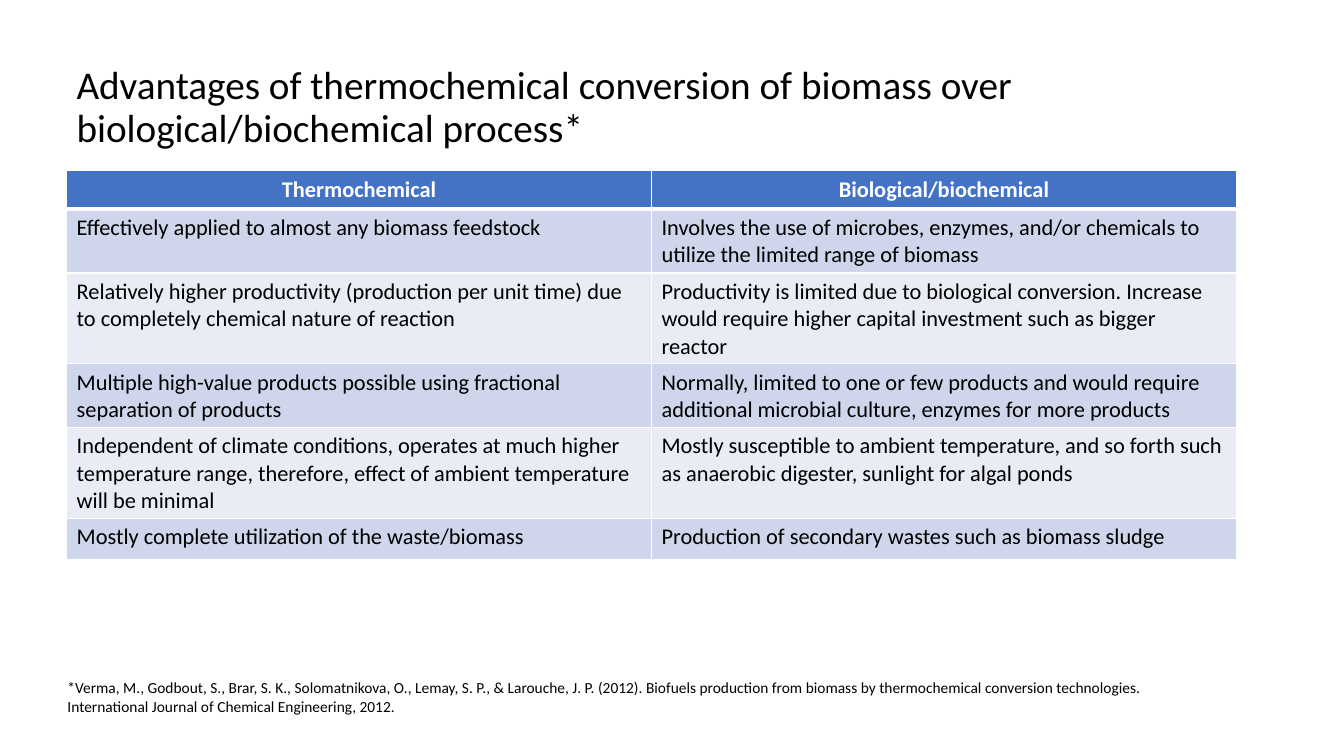
from dataclasses import dataclass

from lxml.etree import SubElement
from pptx import Presentation
from pptx.dml.color import RGBColor
from pptx.enum.text import MSO_ANCHOR, PP_ALIGN
from pptx.oxml.ns import qn
from pptx.util import Cm, Pt


@dataclass(frozen=True)
class Theme:
    font: str = "Calibri"
    text: str = "000000"
    white: str = "FFFFFF"
    header: str = "4472C4"
    bands: tuple = ("CFD5EA", "E9EBF5")
    title_size: int = 28
    table_size: int = 16
    citation_size: int = 11


theme = Theme()


def write(text_frame, text, size, color, bold=False):
    text_frame.word_wrap = True
    paragraph = text_frame.paragraphs[0]
    paragraph.text = text
    paragraph.font.name = theme.font
    paragraph.font.size = Pt(size)
    paragraph.font.bold = bold
    paragraph.font.color.rgb = RGBColor.from_string(color)
    return paragraph


def add_border(cell, side, width):
    properties = cell._tc.get_or_add_tcPr()
    line = SubElement(properties, qn(f"a:ln{side}"), w=str(Pt(width)))
    fill = SubElement(line, qn("a:solidFill"))
    SubElement(fill, qn("a:srgbClr"), val=theme.white)


presentation = Presentation()
presentation.slide_width = Cm(33.87)
presentation.slide_height = Cm(19.05)
slide = presentation.slides.add_slide(presentation.slide_layouts[6])

title = slide.shapes.add_textbox(Cm(1.68), Cm(0.89), Cm(29.48), Cm(3.68))
title.text_frame.vertical_anchor = MSO_ANCHOR.MIDDLE
title_paragraph = write(
    title.text_frame,
    "Advantages of thermochemical conversion of biomass over biological/biochemical process*",
    theme.title_size,
    theme.text,
)
title_paragraph.line_spacing = 0.9

comparison = [
    ("Thermochemical", "Biological/biochemical"),
    (
        "Effectively applied to almost any biomass feedstock",
        "Involves the use of microbes, enzymes, and/or chemicals to utilize the limited range of biomass",
    ),
    (
        "Relatively higher productivity (production per unit time) due to completely chemical nature of reaction",
        "Productivity is limited due to biological conversion. Increase would require higher capital investment such as bigger reactor",
    ),
    (
        "Multiple high-value products possible using fractional separation of products",
        "Normally, limited to one or few products and would require additional microbial culture, enzymes for more products",
    ),
    (
        "Independent of climate conditions, operates at much higher temperature range, therefore, effect of ambient temperature will be minimal",
        "Mostly susceptible to ambient temperature, and so forth such as anaerobic digester, sunlight for algal ponds",
    ),
    (
        "Mostly complete utilization of the waste/biomass",
        "Production of secondary wastes such as biomass sludge",
    ),
]

table = slide.shapes.add_table(
    len(comparison), 2, Cm(1.68), Cm(4.3), Cm(29.48), Cm(6.17)
).table
for row_index, texts in enumerate(comparison):
    is_header = row_index == 0
    table.rows[row_index].height = Cm(0.97 if is_header else 1.04)
    for column_index, text in enumerate(texts):
        cell = table.cell(row_index, column_index)
        color = theme.white if is_header else theme.text
        paragraph = write(cell.text_frame, text, theme.table_size, color, is_header)
        paragraph.alignment = PP_ALIGN.CENTER if is_header else PP_ALIGN.LEFT
        top_width = 3 if row_index == 1 else 1
        bottom_width = 3 if is_header else 1
        for side, width in (("L", 1), ("R", 1), ("T", top_width), ("B", bottom_width)):
            add_border(cell, side, width)
        fill_color = theme.header if is_header else theme.bands[(row_index - 1) % 2]
        cell.fill.solid()
        cell.fill.fore_color.rgb = RGBColor.from_string(fill_color)

citation = slide.shapes.add_textbox(Cm(1.45), Cm(16.97), Cm(29.48), Cm(1.19))
write(
    citation.text_frame,
    "*Verma, M., Godbout, S., Brar, S. K., Solomatnikova, O., Lemay, S. P., & Larouche, J. P. (2012). "
    "Biofuels production from biomass by thermochemical conversion technologies. "
    "International Journal of Chemical Engineering, 2012.",
    theme.citation_size,
    theme.text,
)

presentation.save("out.pptx")
